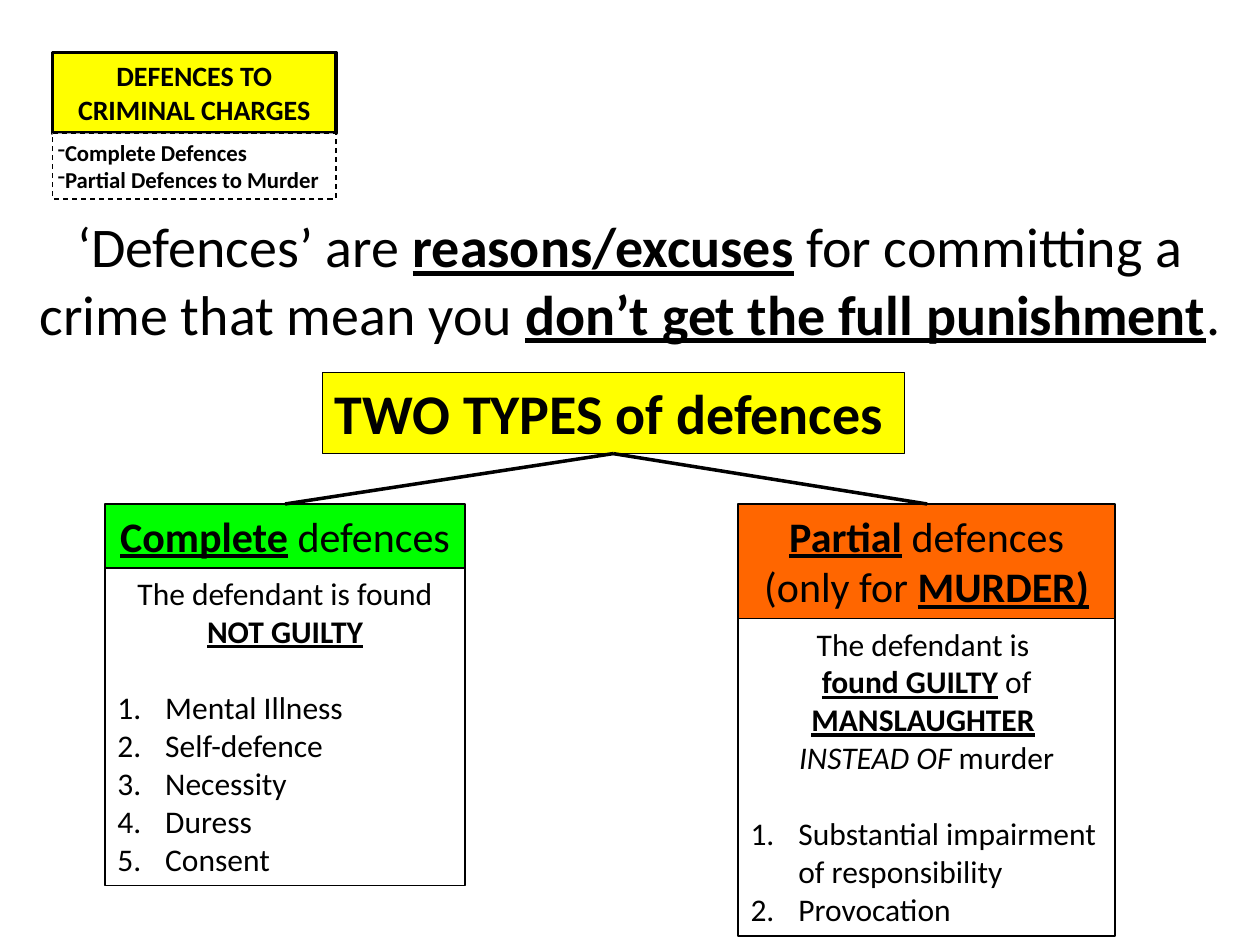
from lxml.etree import SubElement
from pptx import Presentation
from pptx.dml.color import RGBColor
from pptx.enum.dml import MSO_LINE
from pptx.enum.shapes import MSO_CONNECTOR, MSO_SHAPE
from pptx.enum.text import MSO_ANCHOR, MSO_AUTO_SIZE, PP_ALIGN
from pptx.oxml.ns import qn
from pptx.util import Inches, Pt

BLACK = RGBColor(0, 0, 0)
WHITE = RGBColor(255, 255, 255)
YELLOW = RGBColor(255, 255, 0)
GREEN = RGBColor(0, 255, 0)
ORANGE = RGBColor(255, 102, 0)

FONT = "Calibri"
CELL = Inches(1) / 12  # the slide is a grid of 120 columns by 90 rows
COLS, ROWS = 120, 90
INDENT = Inches(0.38)


def grid(*cells):
    return [round(c * CELL) for c in cells]


def add_box(s, col, row, cols, rows, fill=None, width=0.75, dash=False):
    sp = s.shapes.add_shape(MSO_SHAPE.RECTANGLE, *grid(col, row, cols, rows))
    sp.shadow.inherit = False
    if fill is None:
        sp.fill.background()
    else:
        sp.fill.solid()
        sp.fill.fore_color.rgb = fill
    sp.line.color.rgb = BLACK
    sp.line.width = Pt(width)
    if dash:
        sp.line.dash_style = MSO_LINE.DASH
    tf = sp.text_frame
    tf.word_wrap = True
    tf.vertical_anchor = MSO_ANCHOR.TOP
    tf.auto_size = MSO_AUTO_SIZE.SHAPE_TO_FIT_TEXT
    return tf


def add_text(tf, text, size=18, bold=False, align=PP_ALIGN.CENTER, before=0):
    """Add a paragraph; *stars* mean bold underlined, _underscores_ italic."""
    p = tf.paragraphs[0] if not tf.text else tf.add_paragraph()
    p.alignment = align
    p.space_before = Pt(before)
    for i, part in enumerate(text.split("*")):
        for j, piece in enumerate(part.split("_")):
            if not piece:
                continue
            r = p.add_run()
            r.text = piece
            r.font.name = FONT
            r.font.size = Pt(size)
            r.font.color.rgb = BLACK
            r.font.bold = bold or i % 2 == 1
            r.font.underline = i % 2 == 1
            r.font.italic = j % 2 == 1
    return p


def add_numbered(tf, items):
    for i, item in enumerate(items):
        p = add_text(tf, item, align=PP_ALIGN.LEFT, before=0 if i else 22)
        pPr = p._p.get_or_add_pPr()
        pPr.set("marL", str(INDENT))
        pPr.set("indent", str(-INDENT))
        SubElement(pPr, qn("a:buAutoNum"), type="arabicPeriod")


def add_dashed(tf, items):
    for item in items:
        p = add_text(tf, item, size=13, bold=True, align=PP_ALIGN.LEFT)
        SubElement(p._p.get_or_add_pPr(), qn("a:buChar"), char="-")


def add_branch(s, start, end):
    line = s.shapes.add_connector(MSO_CONNECTOR.STRAIGHT, *grid(*start, *end))
    line.line.color.rgb = BLACK
    line.line.width = Pt(2)
    SubElement(line._element.spPr, qn("a:effectLst"))


def add_topic(s):
    tf = add_box(s, 5, 5, 27, 7.7, YELLOW, width=2)
    add_text(tf, "DEFENCES TO CRIMINAL CHARGES", size=16, bold=True)
    tf = add_box(s, 5, 12.7, 27, 6.25, WHITE, dash=True)
    tf.margin_left = tf.margin_right = Inches(0.04)
    tf.margin_top = tf.margin_bottom = Inches(0.04)
    add_dashed(tf, ["Complete Defences", "Partial Defences to Murder"])


def add_definition(s):
    tf = s.shapes.add_textbox(*grid(0, 19.6, COLS, 14.2)).text_frame
    tf.word_wrap = True
    add_text(tf, "‘Defences’ are *reasons/excuses* for committing a crime "
                 "that mean you *don’t get the full punishment*.", size=32)


def add_type(s, col, cols, head_rows, fill, heading, verdict, defences):
    """Draw a coloured heading with the verdict and its defences below."""
    top = 48
    tf = add_box(s, col, top, cols, head_rows, fill)
    for text in heading:
        add_text(tf, text, size=24)
    tf = add_box(s, col, top + head_rows, cols, 30.25)
    for text in verdict:
        add_text(tf, text)
    add_numbered(tf, defences)


def main():
    prs = Presentation()
    prs.slide_width, prs.slide_height = grid(COLS, ROWS)
    s = prs.slides.add_slide(prs.slide_layouts[6])

    add_topic(s)
    add_definition(s)
    tf = add_box(s, 30.7, 35.5, 55.45, 7.7, YELLOW)
    add_text(tf, "TWO TYPES of defences", size=32, bold=True,
             align=PP_ALIGN.LEFT)

    add_type(s, 10, 34.3, 6.1, GREEN,
             ["*Complete* defences"],
             ["The defendant is found", "*NOT GUILTY*"],
             ["Mental Illness", "Self-defence", "Necessity", "Duress",
              "Consent"])
    add_type(s, 70.3, 35.9, 10.9, ORANGE,
             ["*Partial* defences", "(only for *MURDER)*"],
             ["The defendant is ", "*found GUILTY* of *MANSLAUGHTER* ",
              "_INSTEAD OF_ murder"],
             ["Substantial impairment of responsibility", "Provocation"])

    for col in (27.15, 88.3):
        add_branch(s, (58.4, 43.2), (col, 48))

    prs.save("out.pptx")


if __name__ == "__main__":
    main()
